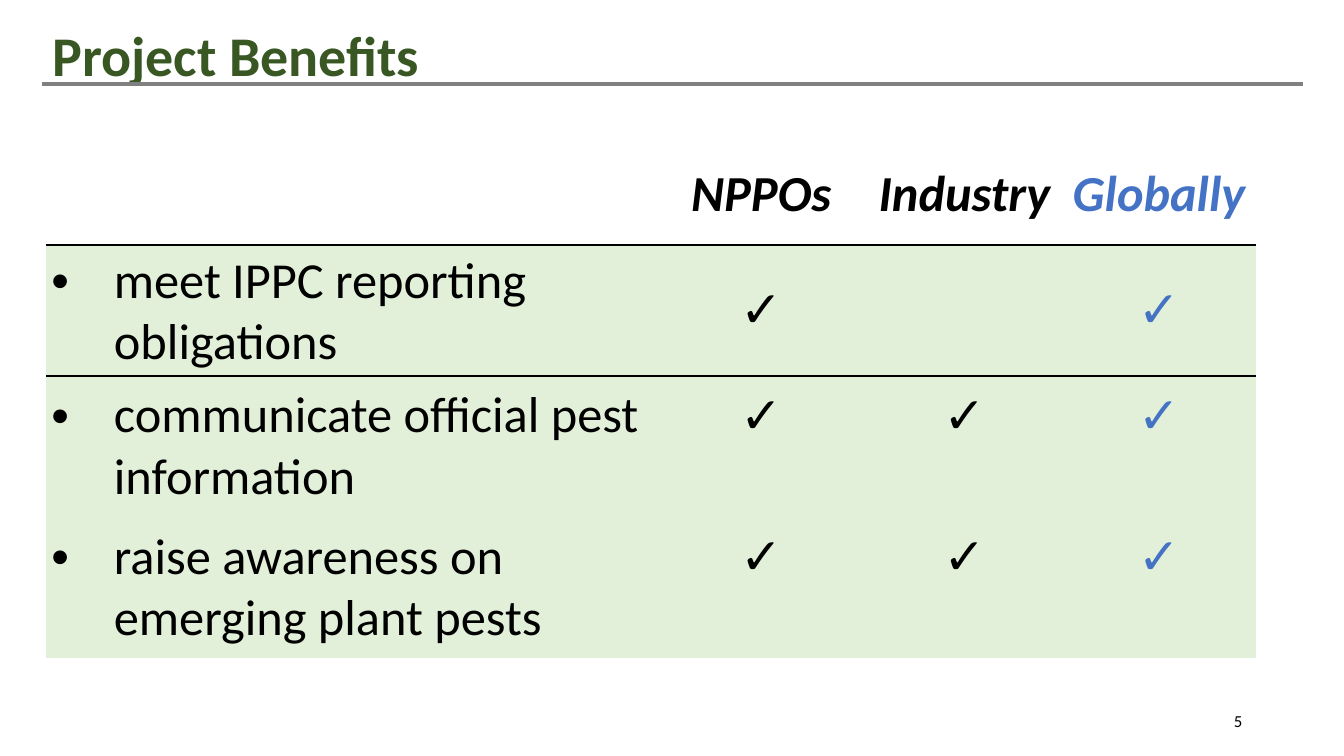
import pptx
import pptx.util
import pptx.dml.color
import pptx.enum.text
import pptx.enum.shapes
import pptx.oxml
import pptx.oxml.ns
import lxml.etree

Inches, Pt = pptx.util.Inches, pptx.util.Pt
ALIGN = pptx.enum.text.PP_ALIGN
MIDDLE = pptx.enum.text.MSO_ANCHOR.MIDDLE
BLACK, BLUE, GREEN, PALE_GREEN, GREY = "000000", "4472C4", "385723", "E2F0D9", "808080"
PADDING = 0.05
LINE_HEIGHT = 0.61


def color(value):
    return pptx.dml.color.RGBColor.from_string(value)


def write(frame, text, size, ink, align=ALIGN.LEFT, bold=False, italic=False):
    """Fill a text frame with one styled paragraph and return it."""
    frame.word_wrap = True
    paragraph = frame.paragraphs[0]
    paragraph.text = text
    paragraph.alignment = align
    font = paragraph.font
    font.name, font.size, font.bold, font.italic = "Calibri", Pt(size), bold, italic
    font.color.rgb = color(ink)
    return paragraph


deck = pptx.Presentation()
deck.slide_width, deck.slide_height = Inches(13.33), Inches(7.5)
slide = deck.slides.add_slide(deck.slide_layouts[6])

# Title, page number and rule
title = slide.shapes.add_textbox(Inches(0.42), Inches(0.09), Inches(10.75), Inches(0.97))
write(title.text_frame, "Project Benefits", 40, GREEN, bold=True).line_spacing = 0.9
page_number = slide.shapes.add_textbox(Inches(9.42), Inches(6.95), Inches(3), Inches(0.4))
write(page_number.text_frame, "5", 12, BLACK, ALIGN.RIGHT)
for box in (title, page_number):
    box.text_frame.vertical_anchor = MIDDLE

rule = slide.shapes.add_connector(
    pptx.enum.shapes.MSO_CONNECTOR.STRAIGHT,
    Inches(0.42), Inches(0.83), Inches(12.92), Inches(0.83))
rule.line.color.rgb = color(GREY)
rule.line.width = Pt(3)
lxml.etree.SubElement(rule._element.spPr, pptx.oxml.ns.qn("a:effectLst"))

# Benefits table
benefits = [
    ("", "NPPOs", "Industry", "Globally"),
    ("meet IPPC reporting obligations", "✓", "", "✓"),
    ("communicate official pest information", "✓", "✓", "✓"),
    ("raise awareness on emerging plant pests", "✓", "✓", "✓"),
]
column_widths = [6.04, 2.1, 1.93, 1.93]
row_heights = [1, 1.25, 1.4, 1.4]
frame = slide.shapes.add_table(
    len(row_heights), len(column_widths), Inches(0.46), Inches(1.43),
    Inches(sum(column_widths)), Inches(sum(row_heights)))
table = frame.table
table.first_row = table.horz_banding = False
# The "No Style, No Grid" table style
style_id = table._tbl.tblPr.find(pptx.oxml.ns.qn("a:tableStyleId"))
style_id.text = "{2D5ABB26-0587-4C30-8999-92F81FD0307C}"
for column, width in zip(table.columns, column_widths):
    column.width = Inches(width)
for row, height in zip(table.rows, row_heights):
    row.height = Inches(height)

for r, texts in enumerate(benefits):
    for c, text in enumerate(texts):
        cell = table.cell(r, c)
        header = r == 0
        cell.vertical_anchor = MIDDLE
        cell.margin_left = cell.margin_right = Inches(PADDING)
        cell.margin_top = cell.margin_bottom = Inches(PADDING)
        if header:
            cell.fill.background()
        else:
            cell.fill.solid()
            cell.fill.fore_color.rgb = color(PALE_GREEN)
        if text:
            paragraph = write(
                cell.text_frame, text, 36, BLUE if c == 3 else BLACK,
                ALIGN.CENTER if c else ALIGN.LEFT, bold=header, italic=header)
            if c == 0:
                properties = paragraph._p.get_or_add_pPr()
                properties.set("marL", str(Inches(0.62)))
                properties.set("indent", str(-Inches(0.62)))
                for tag, key, value in (("a:buFont", "typeface", "Arial"),
                                        ("a:buChar", "char", "•")):
                    lxml.etree.SubElement(properties, pptx.oxml.ns.qn(tag)).set(key, value)
            elif r >= 2:
                # Level the tick with the first of the two lines beside it
                cell.margin_bottom = Inches(PADDING + LINE_HEIGHT)
        if r < 2:
            side = "lnB" if header else "lnT"
            cell._tc.get_or_add_tcPr().insert(0, pptx.oxml.parse_xml(
                f'<a:{side} {pptx.oxml.ns.nsdecls("a")} w="{Pt(1)}"><a:solidFill>'
                f'<a:srgbClr val="{BLACK}"/></a:solidFill></a:{side}>'))

deck.save("out.pptx")
